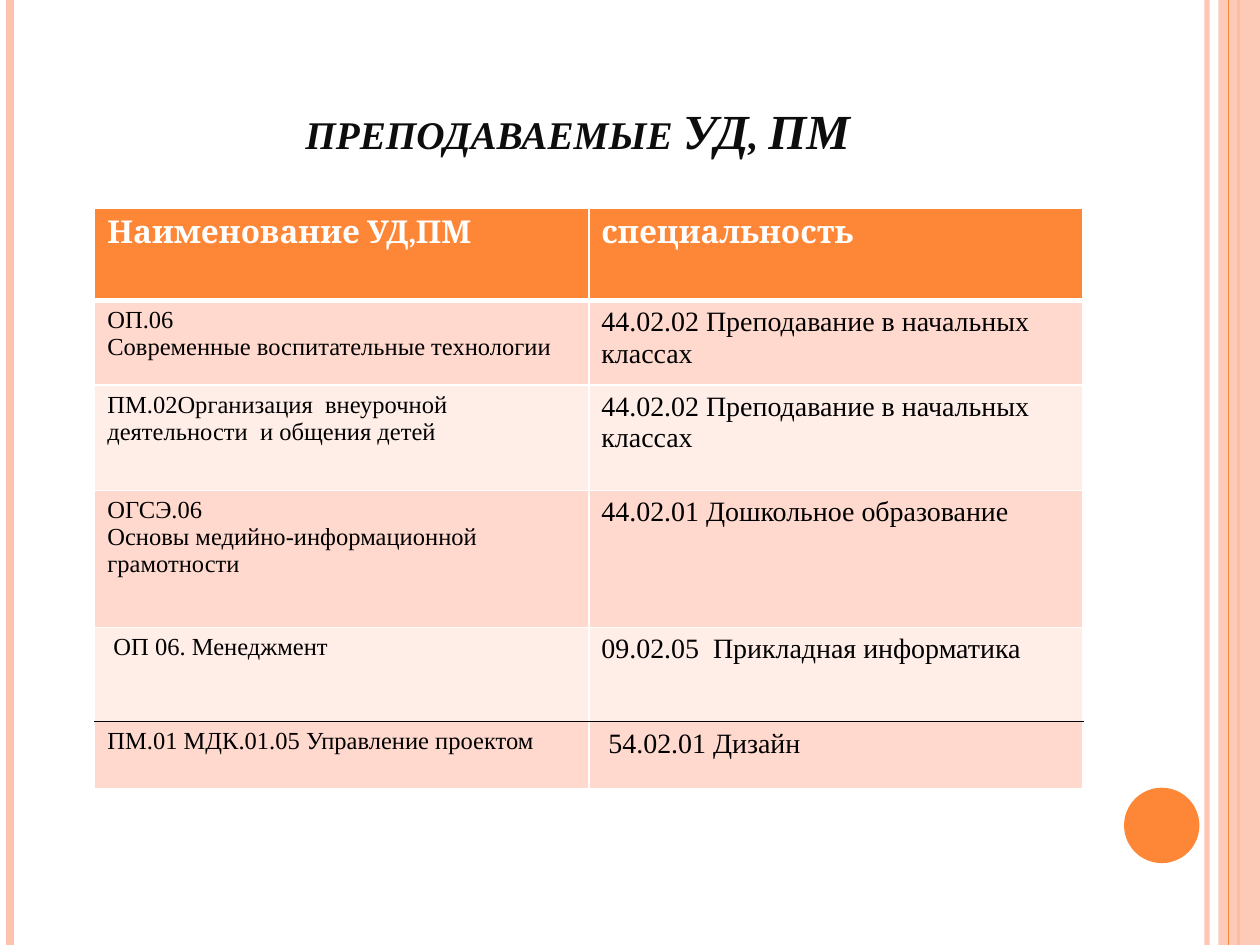
from lxml import etree
from pptx import Presentation
from pptx.dml.color import RGBColor
from pptx.enum.shapes import MSO_CONNECTOR as Connector, MSO_SHAPE as Shape
from pptx.enum.text import MSO_ANCHOR as Anchor, PP_ALIGN as Align
from pptx.oxml.ns import qn
from pptx.util import Cm, Pt

WIDTH, HEIGHT = 25.4, 19.05
ORANGE, PEACH, WHITE, BLACK = "FE8637", "FEC3AE", "FFFFFF", "000000"
BANDS = ("FFD9CE", "FFEDE8")

# x in cm, colour, width in points, opacity in percent
STRIPES_BELOW = [
    (24.33, PEACH, 3, 93),
    (0.2, PEACH, 4.5, 100),
    (24.97, ORANGE, 1.5, 100),
]
STRIPE_ABOVE = (24.77, ORANGE, 0.75, 100)

HEADER_FONT = {"name": "Cambria", "size": Pt(18), "bold": True}
SUBJECT_FONT = {"name": "Times New Roman", "size": Pt(14), "bold": False}
SPECIALTY_FONT = {**SUBJECT_FONT, "size": Pt(16)}
TITLE_FONT = {"name": "Times New Roman", "size": Pt(28), "bold": True, "italic": True}

HEADER = ("Наименование УД,ПМ", "специальность")
COURSES = [
    ("ОП.06\nСовременные воспитательные технологии",
     "44.02.02 Преподавание в начальных классах"),
    ("ПМ.02Организация  внеурочной деятельности  и общения детей",
     "44.02.02 Преподавание в начальных классах"),
    ("ОГСЭ.06\nОсновы медийно-информационной грамотности",
     "44.02.01 Дошкольное образование"),
    (" ОП 06. Менеджмент", "09.02.05  Прикладная информатика"),
    ("ПМ.01 МДК.01.05 Управление проектом", " 54.02.01 Дизайн"),
]
ROW_HEIGHTS = (1.86, 1.7, 2.13, 2.76, 1.9, 1.36)
COLUMN_WIDTH = 9.96
# Rules under particular rows: colour and width in points
RULES_BELOW = {0: (WHITE, 3), 4: (BLACK, 1)}
THIN_RULE = (WHITE, 1)


def rgb(value):
    return RGBColor.from_string(value)


def set_font(text_frame, values, color):
    for paragraph in text_frame.paragraphs:
        for run in paragraph.runs:
            for attribute, value in values.items():
                setattr(run.font, attribute, value)
            run.font.color.rgb = rgb(color)


def set_opacity(element, percent):
    color = next(element.iter(qn("a:srgbClr")))
    etree.SubElement(color, qn("a:alpha"), val=str(percent * 1000))


def add_stripe(slide, x, color, width, opacity):
    """Draw a vertical line over the full slide height."""
    stripe = slide.shapes.add_connector(
        Connector.STRAIGHT, Cm(x), Cm(0), Cm(x), Cm(HEIGHT))
    stripe.line.color.rgb = rgb(color)
    stripe.line.width = Pt(width)
    if opacity < 100:
        set_opacity(stripe.line._get_or_add_ln(), opacity)
    etree.SubElement(stripe._element.spPr, qn("a:effectLst"))


def add_plain_shape(slide, kind, left, top, width, height, color):
    shape = slide.shapes.add_shape(kind, Cm(left), Cm(top), Cm(width), Cm(height))
    shape.shadow.inherit = False
    shape.fill.solid()
    shape.fill.fore_color.rgb = rgb(color)
    shape.line.fill.background()
    return shape


def add_decoration(slide):
    for stripe in STRIPES_BELOW:
        add_stripe(slide, *stripe)
    side_band = add_plain_shape(slide, Shape.RECTANGLE, 24.56, 0, WIDTH - 24.56, HEIGHT, PEACH)
    set_opacity(side_band._element.spPr, 87)
    add_stripe(slide, *STRIPE_ABOVE)
    add_plain_shape(slide, Shape.OVAL, 22.66, 15.88, 1.52, 1.52, ORANGE)


def add_title(slide, text):
    title = slide.shapes.add_textbox(Cm(1.27), Cm(0.76), Cm(20.75), Cm(2.57)).text_frame
    title.word_wrap = True
    title.vertical_anchor = Anchor.BOTTOM
    title.text = text
    paragraph = title.paragraphs[0]
    paragraph.alignment = Align.CENTER
    set_font(title, TITLE_FONT, "0D0D0D")
    paragraph.runs[0].font._element.set("cap", "small")


def set_borders(cell, above, below):
    properties = cell._tc.get_or_add_tcPr()
    sides = {"L": THIN_RULE, "R": THIN_RULE, "T": above, "B": below}
    for side, (color, width) in sides.items():
        border = etree.SubElement(properties, qn(f"a:ln{side}"), w=str(Pt(width)))
        fill = etree.SubElement(border, qn("a:solidFill"))
        etree.SubElement(fill, qn("a:srgbClr"), val=color)


def add_course_table(slide):
    rows = [HEADER, *COURSES]
    table = slide.shapes.add_table(
        len(rows), len(HEADER), Cm(1.91), Cm(4.2),
        Cm(COLUMN_WIDTH * len(HEADER)), Cm(sum(ROW_HEIGHTS))).table
    for column in table.columns:
        column.width = Cm(COLUMN_WIDTH)
    for index, (texts, height) in enumerate(zip(rows, ROW_HEIGHTS)):
        table.rows[index].height = Cm(height)
        if index == 0:
            fill, color, fonts = ORANGE, WHITE, (HEADER_FONT, HEADER_FONT)
        else:
            fill, color = BANDS[(index - 1) % 2], BLACK
            fonts = (SUBJECT_FONT, SPECIALTY_FONT)
        above = RULES_BELOW.get(index - 1, THIN_RULE)
        below = RULES_BELOW.get(index, THIN_RULE)
        for cell, text, font in zip(table.rows[index].cells, texts, fonts):
            cell.text = text
            set_font(cell.text_frame, font, color)
            set_borders(cell, above, below)
            cell.fill.solid()
            cell.fill.fore_color.rgb = rgb(fill)


def main():
    presentation = Presentation()
    presentation.slide_width, presentation.slide_height = Cm(WIDTH), Cm(HEIGHT)
    slide = presentation.slides.add_slide(presentation.slide_layouts[6])
    add_decoration(slide)
    add_title(slide, "преподаваемые УД, ПМ")
    add_course_table(slide)
    presentation.save("out.pptx")


if __name__ == "__main__":
    main()
